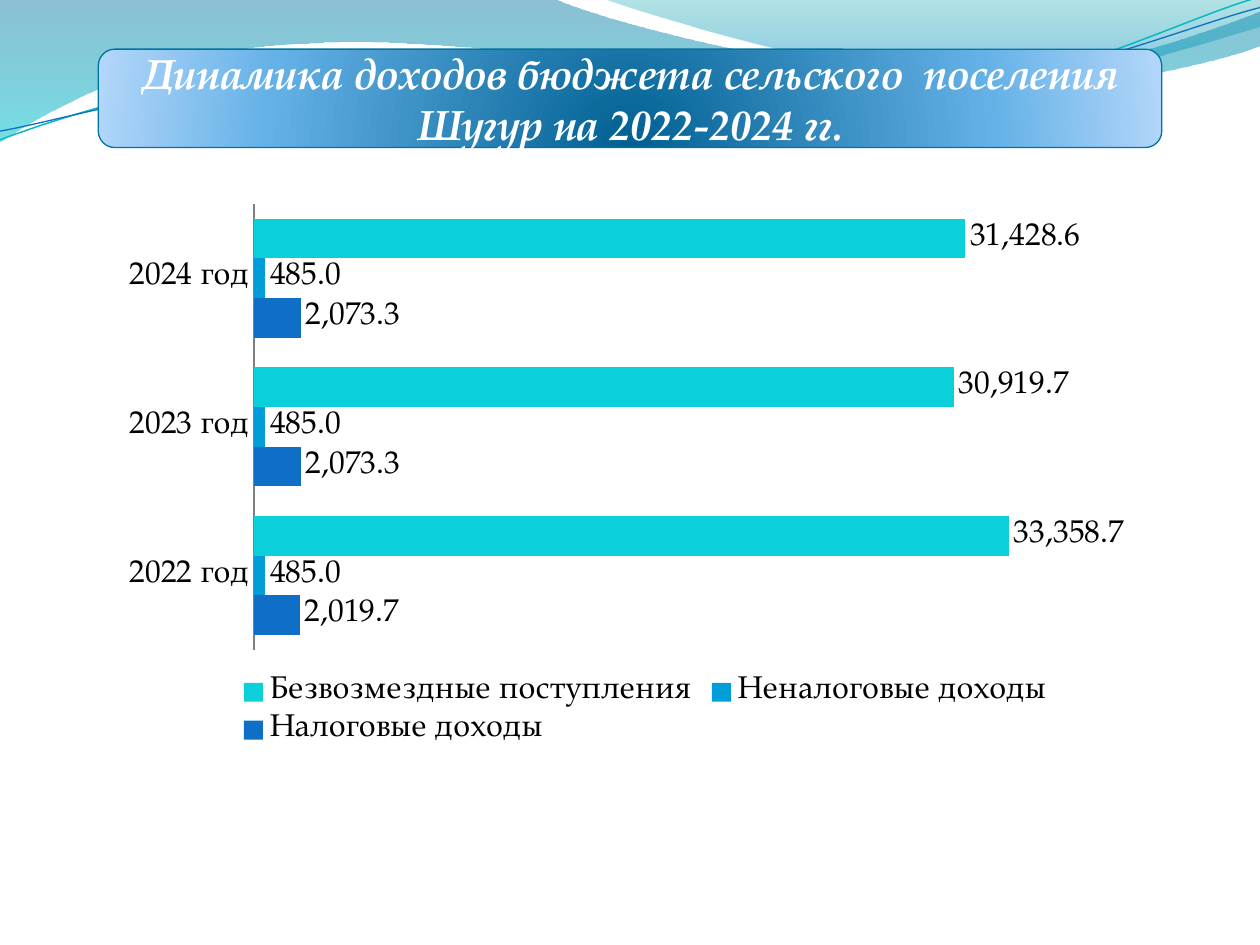
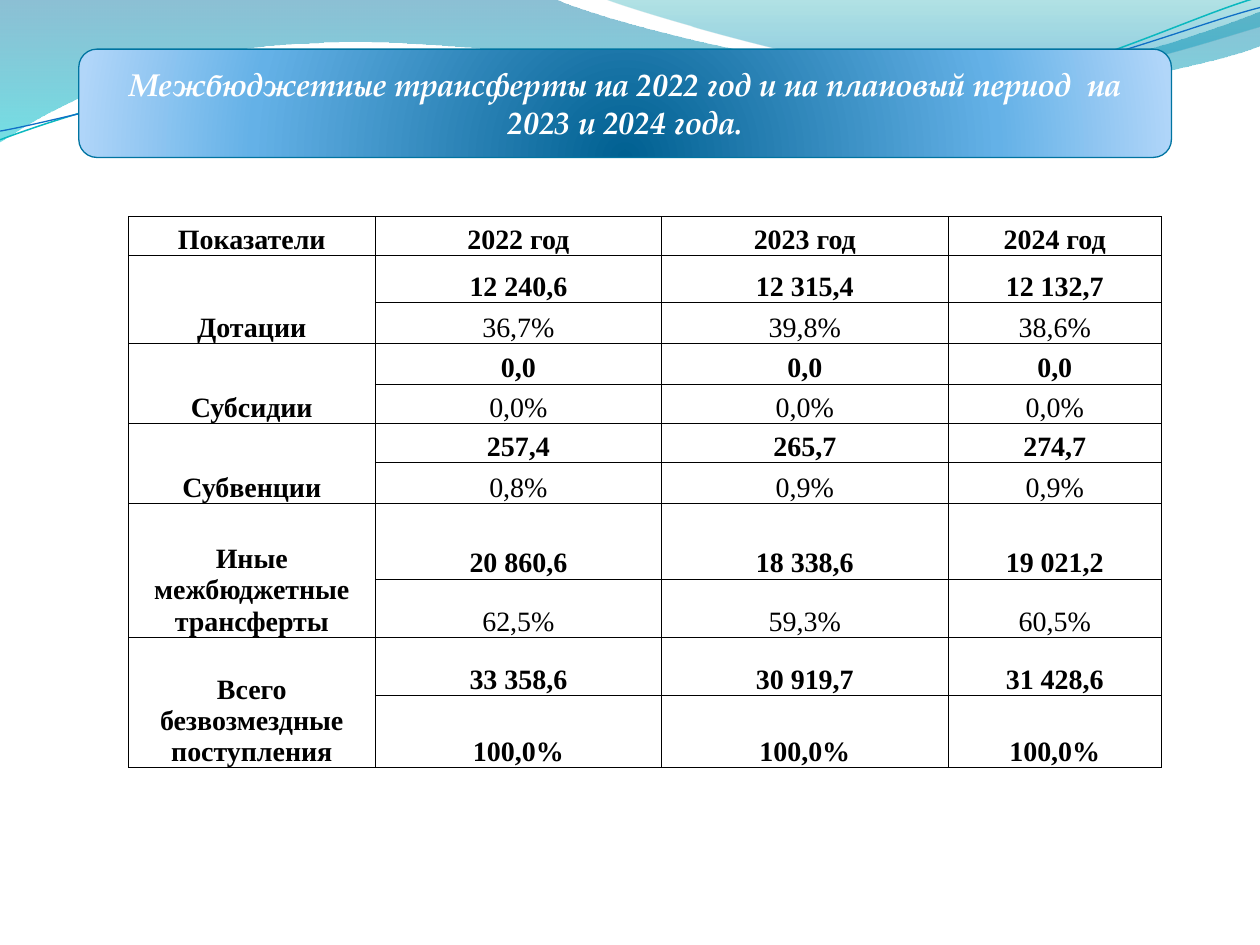
from lxml import etree
from pptx import Presentation
from pptx.chart.data import CategoryChartData
from pptx.dml.color import RGBColor
from pptx.enum.chart import XL_CHART_TYPE, XL_LABEL_POSITION, XL_LEGEND_POSITION, XL_TICK_MARK
from pptx.enum.shapes import MSO_SHAPE
from pptx.enum.text import MSO_ANCHOR, PP_ALIGN
from pptx.oxml import parse_xml
from pptx.oxml.ns import nsdecls, qn
from pptx.util import Pt

BARS = XL_CHART_TYPE.BAR_CLUSTERED
OUTER = XL_LABEL_POSITION.OUTSIDE_END
BOTTOM = XL_LEGEND_POSITION.BOTTOM
NO_TICK = XL_TICK_MARK.NONE
ROUNDED = MSO_SHAPE.ROUNDED_RECTANGLE
MIDDLE, BASE = MSO_ANCHOR.MIDDLE, MSO_ANCHOR.BOTTOM
CENTER = PP_ALIGN.CENTER

SERIF, ROMAN = "TeX Gyre Pagella", "Times New Roman"
WHITE, BLACK, GRAY = "FFFFFF", "000000", "808080"
BLUE, SKY, AQUA, EDGE = "0F6FC6", "009DD9", "0BD0D9", "0074A1"
NUMBER = "#,##0.0"

DOWN = '<a:lin ang="5400000" scaled="1"/>'
GLOW = '<a:path path="circle"><a:fillToRect l="50000" t="130000" r="50000" b="-30000"/></a:path>'
TITLE_STOPS = [(0, "006091", 100), (68, "64B1E7", 100), (100, "B1D6F9", 100)]

# Each step holds one point for a straight line or three for a curve.
BANDS = [
    ((0, 0),
     [(316.8, -0.7), (342.7, 12.2, 478.1, 45.4, 545.8, 45.4),
      (614.2, 45.4, 689.8, 18.7, 720, 6.5), (720.7, 25.9),
      (707.8, 31.7, 626.4, 54.7, 537.1, 54), (447.8, 54, 275, 20.2, 185, 24.5),
      (92.9, 25.9, 33.1, 59.8, -0.7, 81.4)],
     [(0, "0074A1", 45), (100, "00C6CF", 55)]),
    ((344.9, -0.7),
     [(366.5, 7.9, 491, 44.6, 553.7, 46.8), (616.3, 49.7, 691.9, 23, 720, 15.1), (720, 0)],
     [(0, "00A1A9", 30), (80, "008BBF", 45)]),
]
WAVES = [
    ((0, 79.9),
     [(34.6, 67, 113.8, 41, 199.4, 37.4), (284.4, 33.8, 427, 64.1, 513.4, 57.6),
      (599.8, 51.1, 675.4, 10.8, 718.6, -1.4)],
     "0AB8BF", 0.85),
    ((0, 74.9),
     [(33.8, 69.1, 118.1, 43.9, 203.8, 40.3), (290.2, 36.7, 429.8, 60.5, 516.2, 54),
      (601.9, 48.2, 677.5, 15.1, 720, 4.3)],
     BLUE, 0.75),
]

YEARS = ["2022 год", "2023 год", "2024 год"]
INCOME = [
    ("Налоговые доходы", [2019.7, 2073.3, 2073.3], BLUE),
    ("Неналоговые доходы", [485, 485, 485], SKY),
    ("Безвозмездные поступления", [33358.7, 30919.7, 31428.6], AQUA),
]
GRANTS = [
    ("Дотации", ["12 240,6", "12 315,4", "12 132,7"], ["36,7%", "39,8%", "38,6%"]),
    ("Субсидии", ["0,0"] * 3, ["0,0%"] * 3),
    ("Субвенции", ["257,4", "265,7", "274,7"], ["0,8%", "0,9%", "0,9%"]),
    ("Иные межбюджетные трансферты",
     ["20 860,6", "18 338,6", "19 021,2"], ["62,5%", "59,3%", "60,5%"]),
    ("Всего безвозмездные поступления",
     ["33 358,6", "30 919,7", "31 428,6"], ["100,0%"] * 3),
]
WIDTHS = [141, 163.7, 163.7, 122]
HEIGHTS = [22.3, 27, 23.2, 23.2, 22.5, 22.4, 23.2, 43.4, 33.2, 33.2, 41.2]


def paint(target, color):
    """Give a fill or line format one solid colour."""
    target.solid()
    target.fore_color.rgb = RGBColor.from_string(color)


def shade(shape, stops, course):
    """Fill a shape with a gradient of (place, colour, opacity) stops."""
    marks = "".join(
        f'<a:gs pos="{place * 1000}"><a:srgbClr val="{color}">'
        f'<a:alpha val="{alpha * 1000}"/></a:srgbClr></a:gs>'
        for place, color, alpha in stops)
    shape.fill.background()
    props = shape.element.spPr
    props.replace(props.find(qn("a:noFill")), parse_xml(
        f'<a:gradFill {nsdecls("a")} rotWithShape="1">'
        f'<a:gsLst>{marks}</a:gsLst>{course}</a:gradFill>'))


def bend(shape, steps):
    """Join each three straight pieces of a curve step into one curve."""
    lines = iter(list(shape.element.spPr.iter(qn("a:lnTo"))))
    for step in steps:
        first = next(lines)
        if len(step) == 6:
            first.tag = qn("a:cubicBezTo")
            for _ in range(2):
                line = next(lines)
                first.append(line[0])
                line.getparent().remove(line)


def outline(slide, start, steps, close):
    """Draw a freeform of straight and curved steps."""
    pen = slide.shapes.build_freeform(*map(Pt, start))
    for step in steps:
        points = zip(map(Pt, step[::2]), map(Pt, step[1::2]))
        pen.add_line_segments(list(points), close=False)
    if close:
        pen.add_line_segments([], close=True)
    shape = pen.convert_to_shape()
    shape.shadow.inherit = False
    bend(shape, steps)
    return shape


def backdrop(slide):
    """Draw the shared bands and waves at the top of a slide."""
    for start, steps, stops in BANDS:
        band = outline(slide, start, steps, True)
        shade(band, stops, DOWN)
        band.line.fill.background()
    for start, steps, color, width in WAVES:
        wave = outline(slide, start, steps, False)
        wave.fill.background()
        paint(wave.line.fill, color)
        wave.line.width = Pt(width)


def write(frame, text, size, font, color, bold, italic=False):
    """Write one centred run into a text frame."""
    para = frame.paragraphs[0]
    para.alignment = CENTER
    run = para.add_run()
    run.text = text
    run.font.size, run.font.name = Pt(size), font
    run.font.bold, run.font.italic = bold, italic
    paint(run.font.fill, color)


def banner(slide, text, box, size):
    """Add the glowing title plate."""
    plate = slide.shapes.add_shape(ROUNDED, *map(Pt, box))
    shade(plate, TITLE_STOPS, GLOW)
    paint(plate.line.fill, EDGE)
    plate.line.width = Pt(0.75)
    plate.shadow.inherit = False
    frame = plate.text_frame
    frame.word_wrap = True
    frame.vertical_anchor = MIDDLE
    write(frame, text, size, SERIF, WHITE, True, True)


def arrange(chart, box, inner):
    """Fix the inner plot area, given in points on the slide."""
    left, top, width, height = box
    x, y, w, h = inner
    shares = ((x - left) / width, (y - top) / height, w / width, h / height)
    area = chart.plots[0]._element.getparent()
    old = area.find(qn("c:layout"))
    if old is not None:
        area.remove(old)
    layout = parse_xml(
        f'<c:layout {nsdecls("c")}><c:manualLayout><c:layoutTarget val="inner"/>'
        '<c:xMode val="edge"/><c:yMode val="edge"/></c:manualLayout></c:layout>')
    for name, share in zip("xywh", shares):
        etree.SubElement(layout[0], qn(f"c:{name}")).set("val", f"{share:.4f}")
    area.insert(0, layout)


def bars(slide, box, inner):
    """Add the bar chart of income by year."""
    data = CategoryChartData(number_format=NUMBER)
    data.categories = YEARS
    for name, values, _ in INCOME:
        data.add_series(name, values)
    chart = slide.shapes.add_chart(BARS, *map(Pt, box), data).chart
    chart.font.size, chart.font.name = Pt(18), SERIF
    paint(chart.font.fill, BLACK)
    chart.has_title = False
    chart.has_legend = True
    chart.legend.position = BOTTOM
    chart.legend.include_in_layout = False
    years, sums = chart.category_axis, chart.value_axis
    years.major_tick_mark = years.minor_tick_mark = NO_TICK
    paint(years.format.line.fill, GRAY)
    sums.visible = sums.has_major_gridlines = False
    sums.minimum_scale, sums.maximum_scale = 0, 40000
    plot = chart.plots[0]
    plot.gap_width, plot.overlap = 75, 0
    plot.vary_by_categories = False
    for series, (_, _, color) in zip(plot.series, INCOME):
        paint(series.format.fill, color)
        labels = series.data_labels
        labels.show_value = True
        labels.number_format, labels.number_format_is_linked = NUMBER, False
        labels.position = OUTER
    arrange(chart, box, inner)


def border(cell):
    """Draw thin black lines on all sides of a cell."""
    props = cell._tc.get_or_add_tcPr()
    for side in "LRTB":
        props.append(parse_xml(
            f'<a:ln{side} {nsdecls("a")} w="{Pt(0.5)}"><a:solidFill>'
            f'<a:srgbClr val="{BLACK}"/></a:solidFill></a:ln{side}>'))


def grid(slide, left, top):
    """Add the table of grants with a value and a share row each."""
    rows = [("Показатели", YEARS, True)]
    for name, sums, shares in GRANTS:
        rows += [(name, sums, True), ("", shares, shares[0] == "100,0%")]
    table = slide.shapes.add_table(
        len(rows), len(WIDTHS), Pt(left), Pt(top), Pt(sum(WIDTHS)), Pt(sum(HEIGHTS))).table
    table.first_row = table.horz_banding = False
    for column, width in zip(table.columns, WIDTHS):
        column.width = Pt(width)
    for index, (name, values, bold) in enumerate(rows):
        table.rows[index].height = Pt(HEIGHTS[index])
        for place, text in enumerate([name, *values]):
            cell = table.cell(index, place)
            border(cell)
            cell.fill.background()
            cell.vertical_anchor = BASE
            cell.margin_left = cell.margin_right = cell.margin_top = Pt(0.7)
            cell.margin_bottom = Pt(0)
            if text:
                write(cell.text_frame, text, 16, ROMAN, BLACK, bold)
    for index in range(1, len(rows), 2):
        table.cell(index, 0).merge(table.cell(index + 1, 0))


def main():
    """Build both slides and save the deck."""
    deck = Presentation()
    deck.slide_width, deck.slide_height = Pt(720), Pt(540)
    first, second = (deck.slides.add_slide(deck.slide_layouts[6]) for _ in range(2))
    for slide in (first, second):
        backdrop(slide)
    banner(first, "Динамика доходов бюджета сельского  поселения Шугур на 2022-2024 гг.",
           (56.2, 28.1, 607.7, 56.2), 24)
    bars(first, (61.9, 110.2, 613.5, 319.7), (145.2, 116.6, 517.3, 254.8))
    banner(second, "Межбюджетные трансферты на 2022 год и на плановый период  на "
           "2023 и 2024 года.", (45, 28.1, 624.4, 61.9), 18)
    grid(second, 73.4, 123.8)
    deck.save("out.pptx")


if __name__ == "__main__":
    main()
